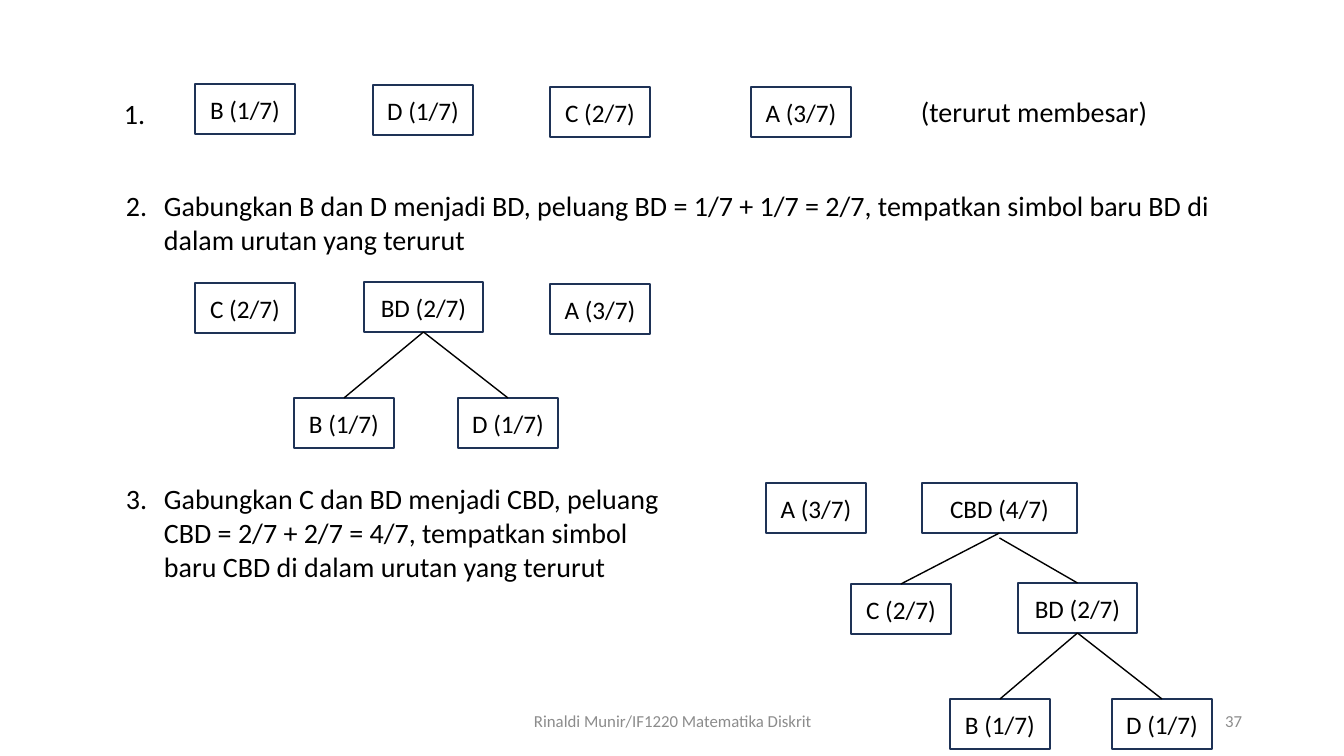
from pptx import Presentation, util as u
from pptx.dml.color import RGBColor
from pptx.enum import shapes, text
from pptx.oxml import parse_xml
from pptx.oxml.ns import nsdecls

# Content: lengths in px
HEX = {"ink": "000000", "edge": "1E3256", "grey": "8C8C8C"}
FONT = "Calibri"
HIGH = 50
WIDE = {1: 100, 2: 119, 3: 155}  # box width by count of letters

# key: symbol, chance, left, top
NODES = {
    "B1": ("B", "1/7", 195, 84),
    "D1": ("D", "1/7", 373, 85),
    "C1": ("C", "2/7", 550, 87),
    "A1": ("A", "3/7", 751, 87),
    "C2": ("C", "2/7", 195, 283),
    "BD2": ("BD", "2/7", 364, 282),
    "A2": ("A", "3/7", 550, 284),
    "B2": ("B", "1/7", 294, 398),
    "D2": ("D", "1/7", 458, 398),
    "A3": ("A", "3/7", 766, 483),
    "CBD3": ("CBD", "4/7", 922, 483),
    "C3": ("C", "2/7", 851, 584),
    "BD3": ("BD", "2/7", 1018, 583),
    "B3": ("B", "1/7", 950, 699),
    "D3": ("D", "1/7", 1112, 699),
}

# parent, child, gap below the parent
EDGES = [
    ("BD2", "B2", 0), ("BD2", "D2", 0),
    ("CBD3", "C3", 0), ("CBD3", "BD3", 5),
    ("BD3", "B3", 0), ("BD3", "D3", 0),
]

# words, place, format
HANG = {"hang": 38}
FOOT = {"size": 12, "color": "grey", "anchor": text.MSO_ANCHOR.MIDDLE}
NOTES = [
    ("1.", (114, 92, 60, 44), {}),
    ("(terurut membesar)", (911, 90, 319, 44), {}),
    ("2.\tGabungkan B dan D menjadi BD, peluang BD = 1/7 + 1/7 = 2/7, "
     "tempatkan simbol baru BD di dalam urutan yang terurut",
     (116, 184, 1150, 78), HANG),
    ("3.\tGabungkan C dan BD menjadi CBD, peluang CBD = 2/7 + 2/7 = 4/7, "
     "tempatkan simbol baru CBD di dalam urutan yang terurut",
     (116, 477, 568, 112), HANG),
    ("Rinaldi Munir/IF1220 Matematika Diskrit", (446, 701, 454, 40),
     {**FOOT, "align": text.PP_ALIGN.CENTER}),
    ("37", (950, 701, 302, 40), {**FOOT, "align": text.PP_ALIGN.RIGHT}),
]


def px(n):
    return u.Emu(round(n * 914400 / 100.8))


def write(shape, words, size=20, color="ink", align=text.PP_ALIGN.LEFT,
          anchor=text.MSO_ANCHOR.TOP, hang=0):
    frame = shape.text_frame
    frame.word_wrap = True
    frame.vertical_anchor = anchor
    para = frame.paragraphs[0]
    para.text = words
    para.alignment = align
    if hang:
        props = para._p.get_or_add_pPr()
        props.set("marL", str(px(hang)))
        props.set("indent", str(-px(hang)))
    font = para.runs[0].font
    font.name, font.size = FONT, u.Pt(size)
    font.color.rgb = RGBColor.from_string(HEX[color])


def stroke(line, color):
    line.color.rgb = RGBColor.from_string(HEX[color])
    line.width = u.Pt(1)


deck = Presentation()
deck.slide_width, deck.slide_height = px(1344), px(756)
slide = deck.slides.add_slide(deck.slide_layouts[6])

# Numbered steps and footer
for words, place, form in NOTES:
    write(slide.shapes.add_textbox(*map(px, place)), words, **form)

# Symbol boxes
boxes = {}
for key, (name, odds, left, top) in NODES.items():
    box = slide.shapes.add_shape(shapes.MSO_SHAPE.RECTANGLE, px(left), px(top),
                                 px(WIDE[len(name)]), px(HIGH))
    box.shadow.inherit = False
    box.fill.background()
    stroke(box.line, "edge")
    write(box, f"{name} ({odds})", size=18, align=text.PP_ALIGN.CENTER,
          anchor=text.MSO_ANCHOR.MIDDLE)
    boxes[key] = box

# Tree branches
for head, leaf, gap in EDGES:
    up, down = boxes[head], boxes[leaf]
    link = slide.shapes.add_connector(
        shapes.MSO_CONNECTOR.STRAIGHT,
        up.left + up.width // 2, up.top + up.height + px(gap),
        down.left + down.width // 2, down.top)
    if not gap:
        link.begin_connect(up, 2)
    link.end_connect(down, 0)
    stroke(link.line, "ink")
    link._element.spPr.append(parse_xml(f"<a:effectLst {nsdecls('a')}/>"))

deck.save("out.pptx")
